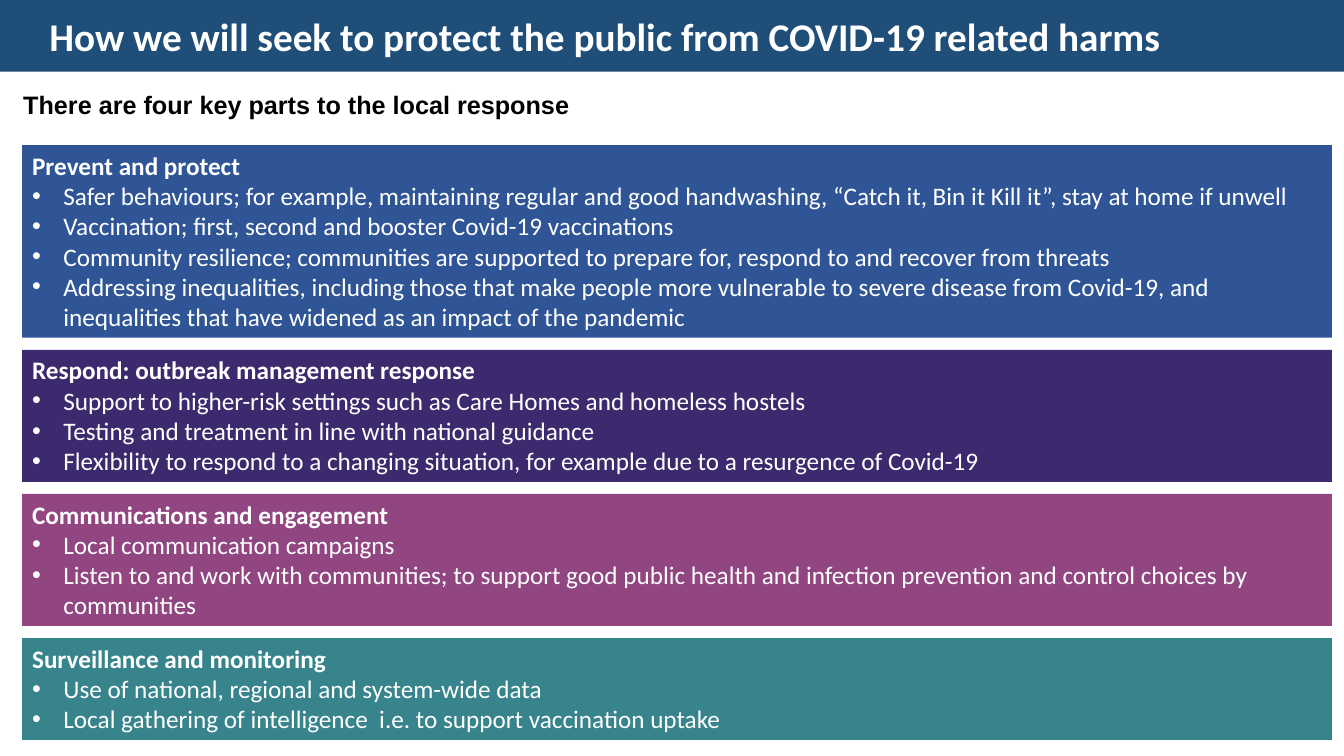
from lxml import etree
from pptx import Presentation
from pptx.dml.color import RGBColor
from pptx.enum.shapes import MSO_SHAPE
from pptx.enum.text import MSO_ANCHOR, MSO_AUTO_SIZE, PP_ALIGN
from pptx.oxml.ns import qn
from pptx.util import Inches, Pt

RECT = MSO_SHAPE.RECTANGLE
TOP, MIDDLE = MSO_ANCHOR.TOP, MSO_ANCHOR.MIDDLE
LEFT = PP_ALIGN.LEFT
FIXED = MSO_AUTO_SIZE.NONE

WIDE, HIGH = 13.33, 7.5
ROW, PAD, GAP = 0.3, 0.11, 0.12
HANG = 0.31
COLORS = {
    "banner": "1F4E79",
    "prevent": "2F5597",
    "respond": "3D2A6E",
    "engage": "914581",
    "monitor": "38848C",
    "light": "FFFFFF",
    "dark": "000000",
}
CARDS = [
    ("prevent", 6, "Prevent and protect", [
        "Safer behaviours; for example, maintaining regular and good handwashing, “Catch it, Bin it Kill it”, stay at home if unwell",
        "Vaccination; first, second and booster Covid-19 vaccinations",
        "Community resilience; communities are supported to prepare for, respond to and recover from threats",
        "Addressing inequalities, including those that make people more vulnerable to severe disease from Covid-19, and inequalities that have widened as an impact of the pandemic",
    ]),
    ("respond", 4, "Respond: outbreak management response", [
        "Support to higher-risk settings such as Care Homes and homeless hostels",
        "Testing and treatment in line with national guidance",
        "Flexibility to respond to a changing situation, for example due to a resurgence of Covid-19",
    ]),
    ("engage", 4, "Communications and engagement", [
        "Local communication campaigns",
        "Listen to and work with communities; to support good public health and infection prevention and control choices by communities",
    ]),
    ("monitor", 3, "Surveillance and monitoring", [
        "Use of national, regional and system-wide data",
        "Local gathering of intelligence  i.e. to support vaccination uptake",
    ]),
]


def color(name):
    """Return the named colour."""
    return RGBColor.from_string(COLORS[name])


def place(shape, box):
    """Move a shape to a box of left, top, width and height in inches."""
    shape.left, shape.top, shape.width, shape.height = map(Inches, box)


def paint(shape, name):
    """Give a shape a plain fill."""
    shape.fill.solid()
    shape.fill.fore_color.rgb = color(name)


def indent(para, left, first, mark=None):
    """Set a paragraph's indents and its bullet mark."""
    props = para._p.get_or_add_pPr()
    props.set("marL", str(Inches(left)))
    props.set("indent", str(Inches(first)))
    if mark:
        etree.SubElement(props, qn("a:buFont")).set("typeface", "Arial")
        etree.SubElement(props, qn("a:buChar")).set("char", mark)
    else:
        etree.SubElement(props, qn("a:buNone"))


def style(para, size, face, name, bold):
    """Set a paragraph's font and align it left."""
    para.alignment = LEFT
    font = para.font
    font.size, font.name, font.bold = Pt(size), face, bold
    font.color.rgb = color(name)


def banner(title, box):
    """Fill the title banner."""
    place(title, box)
    paint(title, "banner")
    frame = title.text_frame
    frame.text = "How we will seek to protect the public from COVID-19 related harms"
    frame.auto_size, frame.vertical_anchor = FIXED, MIDDLE
    para = frame.paragraphs[0]
    indent(para, 0, 0.39)
    style(para, 28, "Calibri", "light", True)


def intro(body, box):
    """Write the lead line in the body placeholder."""
    place(body, box)
    frame = body.text_frame
    frame.text = "There are four key parts to the local response"
    frame.auto_size, frame.vertical_anchor = FIXED, TOP
    para = frame.paragraphs[0]
    para.line_spacing, para.space_before = 0.9, Pt(0)
    indent(para, 0, 0)
    style(para, 18, "Arial", "dark", True)


def card(slide, box, fill, head, items):
    """Draw a coloured card with a heading and bullets."""
    shape = slide.shapes.add_shape(RECT, *map(Inches, box))
    shape.shadow.inherit = False
    shape.line.fill.background()
    paint(shape, fill)
    frame = shape.text_frame
    frame.word_wrap, frame.vertical_anchor = True, TOP
    frame.text = head
    style(frame.paragraphs[0], 18, "Calibri", "light", True)
    for item in items:
        para = frame.add_paragraph()
        para.text = item
        indent(para, HANG, -HANG, "•")
        style(para, 18, "Calibri", "light", False)


def stack(slide, left, top, width):
    """Stack the cards, each as tall as its rows of text."""
    for fill, rows, head, items in CARDS:
        height = rows * ROW + PAD
        card(slide, (left, top, width, height), fill, head, items)
        top += height + GAP


def main():
    """Build and save the slide."""
    deck = Presentation()
    deck.slide_width, deck.slide_height = Inches(WIDE), Inches(HIGH)
    slide = deck.slides.add_slide(deck.slide_layouts[1])
    banner(slide.shapes.title, (0, 0, WIDE, 0.71))
    intro(slide.placeholders[1], (0.13, 0.87, 12.29, 5.99))
    stack(slide, 0.22, 1.44, 12.99)
    deck.save("out.pptx")


if __name__ == "__main__":
    main()
